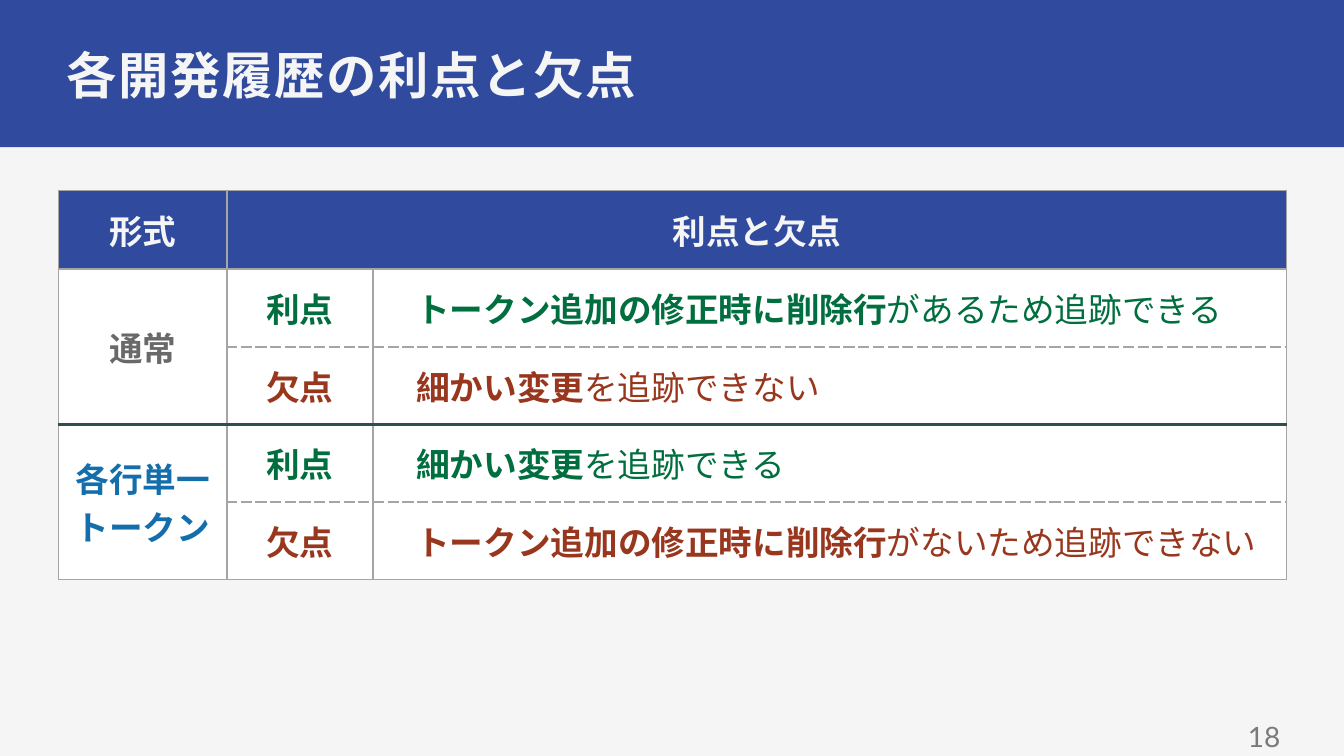
from dataclasses import dataclass

from lxml import etree
from pptx import Presentation
from pptx.dml.color import RGBColor
from pptx.enum.shapes import MSO_SHAPE
from pptx.enum.text import MSO_ANCHOR, MSO_AUTO_SIZE, PP_ALIGN
from pptx.oxml.ns import qn
from pptx.util import Inches, Pt

RECTANGLE = MSO_SHAPE.RECTANGLE
TOP, MIDDLE = MSO_ANCHOR.TOP, MSO_ANCHOR.MIDDLE
LEFT, CENTER, RIGHT = PP_ALIGN.LEFT, PP_ALIGN.CENTER, PP_ALIGN.RIGHT
JUSTIFY = PP_ALIGN.JUSTIFY
NO_AUTOFIT = MSO_AUTO_SIZE.NONE
TITLE_ONLY = 5
NO_STYLE = "{2D5ABB26-0587-4C30-8999-92F81FD0307C}"


@dataclass(frozen=True)
class Theme:
    background: str = "F5F5F5"
    primary: str = "304A9E"
    cell: str = "FFFFFF"
    muted: str = "696969"
    accent: str = "136EAB"
    merit: str = "006E3E"
    drawback: str = "98361E"
    page: str = "7A7A7A"
    grid: str = "A5A5A5"
    divider: str = "2F4F4F"
    title_font: str = "Lato"
    table_font: str = "Noto Sans CJK JP"
    title_size: int = 36
    table_size: int = 24
    page_size: int = 20


THEME = Theme()
GRID_LINE = (THEME.grid, 1.5, "solid")
DASHED_LINE = (THEME.grid, 1.5, "sysDash")
DIVIDER_LINE = (THEME.divider, 2.25, "solid")

COLUMN_WIDTHS = (1.67, 1.45, 9.06)
ROW_HEIGHTS = (0.78, 0.77, 0.77, 0.77, 0.77)
# Format, colour, then the bold start and plain end of its merit and drawback
FORMATS = (
    ("通常", THEME.muted,
     ("トークン追加の修正時に削除行", "があるため追跡できる"),
     ("細かい変更", "を追跡できない")),
    ("各行単一トークン", THEME.accent,
     ("細かい変更", "を追跡できる"),
     ("トークン追加の修正時に削除行", "がないため追跡できない")),
)


def rgb(color):
    return RGBColor.from_string(color)


def format_run(r, font, size, color, bold=False):
    """Style a run, using one typeface for Latin and Japanese text."""
    r.font.name = font
    r.font.size = Pt(size)
    r.font.bold = bold
    r.font.color.rgb = rgb(color)
    latin = r.font._element.find(qn("a:latin"))
    ea = etree.Element(qn("a:ea"), typeface=font)
    latin.addnext(ea)


def add_title_band(slide, left, top, width, height, text):
    title = slide.shapes.title
    band = slide.shapes.add_shape(RECTANGLE, Inches(left), Inches(top),
                                  Inches(width), Inches(height))
    band.shadow.inherit = False
    band.fill.solid()
    band.fill.fore_color.rgb = rgb(THEME.primary)
    band.line.fill.background()
    title.element.addprevious(band.element)

    title.left, title.top = Inches(left + 0.58), Inches(top + 0.43)
    title.width, title.height = Inches(width - 1.15), Inches(0.59)
    tf = title.text_frame
    tf.text = text
    tf.auto_size = NO_AUTOFIT
    tf.word_wrap = True
    tf.vertical_anchor = TOP
    tf.margin_left = tf.margin_top = tf.margin_right = Inches(0.08)
    tf.margin_bottom = Inches(0.06)
    p = tf.paragraphs[0]
    p.alignment = JUSTIFY
    p.line_spacing = 0.9
    p.space_before = Pt(16)
    r = p.runs[0]
    format_run(r, THEME.title_font, THEME.title_size, THEME.background, True)
    r.font._element.set("spc", "110")


def horizontal_line(index, col):
    """Return the style of the rule above table row number index."""
    if index == 3:
        return DIVIDER_LINE
    return DASHED_LINE if index in (2, 4) and col > 0 else GRID_LINE


def set_borders(cell, row, col):
    """Rule the cell's outer sides, leaving the inside of a merge open."""
    last_row = row + (cell.span_height if cell.is_merge_origin else 1)
    sides = {
        "L": GRID_LINE,
        "R": GRID_LINE,
        "T": horizontal_line(row, col),
        "B": horizontal_line(last_row, col),
    }
    if cell.is_spanned:
        del sides["L" if row == 0 else "T"]
    tc_pr = cell._tc.get_or_add_tcPr()
    for side, (color, width, dash) in sides.items():
        ln = etree.SubElement(tc_pr, qn("a:ln" + side), w=str(Pt(width)))
        fill = etree.SubElement(ln, qn("a:solidFill"))
        etree.SubElement(fill, qn("a:srgbClr"), val=color)
        etree.SubElement(ln, qn("a:prstDash"), val=dash)


def write_cell(cell, color, bold_text, plain_text="", alignment=CENTER):
    p = cell.text_frame.paragraphs[0]
    p.alignment = alignment
    for text, bold in ((bold_text, True), (plain_text, False)):
        if text:
            r = p.add_run()
            r.text = text
            format_run(r, THEME.table_font, THEME.table_size, color, bold)


def add_comparison_table(slide, left, top, width, height):
    frame = slide.shapes.add_table(len(ROW_HEIGHTS), len(COLUMN_WIDTHS),
                                   Inches(left), Inches(top),
                                   Inches(width), Inches(height))
    frame.element.find(".//" + qn("a:tableStyleId")).text = NO_STYLE
    table = frame.table
    table.first_row = table.horz_banding = False
    for column, share in zip(table.columns, COLUMN_WIDTHS):
        column.width = Inches(width * share / sum(COLUMN_WIDTHS))
    for row, share in zip(table.rows, ROW_HEIGHTS):
        row.height = Inches(height * share / sum(ROW_HEIGHTS))

    table.cell(0, 1).merge(table.cell(0, 2))
    write_cell(table.cell(0, 0), THEME.background, "形式")
    write_cell(table.cell(0, 1), THEME.background, "利点と欠点")
    for i, (name, color, merit, drawback) in enumerate(FORMATS):
        first = 1 + 2 * i
        table.cell(first, 0).merge(table.cell(first + 1, 0))
        write_cell(table.cell(first, 0), color, name)
        points = (("利点", THEME.merit, merit),
                  ("欠点", THEME.drawback, drawback))
        for row, (label, point_color, texts) in enumerate(points, first):
            write_cell(table.cell(row, 1), point_color, label)
            detail = table.cell(row, 2)
            detail.margin_left = Inches(0.43)
            write_cell(detail, point_color, *texts, alignment=LEFT)

    for row in range(len(ROW_HEIGHTS)):
        for col in range(len(COLUMN_WIDTHS)):
            cell = table.cell(row, col)
            cell.vertical_anchor = MIDDLE
            set_borders(cell, row, col)
            cell.fill.solid()
            cell.fill.fore_color.rgb = rgb(THEME.cell if row else THEME.primary)


def add_page_number(slide, left, top, width, height, number):
    sp = slide.shapes.add_textbox(Inches(left), Inches(top),
                                  Inches(width), Inches(height))
    tf = sp.text_frame
    tf.text = str(number)
    tf.word_wrap = True
    tf.vertical_anchor = MIDDLE
    tf.margin_left = tf.margin_right = Inches(0.06)
    tf.margin_top = tf.margin_bottom = Inches(0.06)
    p = tf.paragraphs[0]
    p.alignment = RIGHT
    format_run(p.runs[0], THEME.title_font, THEME.page_size, THEME.page)


def main():
    prs = Presentation()
    prs.slide_width, prs.slide_height = Inches(13.33), Inches(7.5)
    slide = prs.slides.add_slide(prs.slide_layouts[TITLE_ONLY])
    slide.background.fill.solid()
    slide.background.fill.fore_color.rgb = rgb(THEME.background)
    add_title_band(slide, 0, 0, 13.33, 1.46, "各開発履歴の利点と欠点")
    add_comparison_table(slide, 0.58, 1.89, 12.18, 3.86)
    add_page_number(slide, 9.76, 7.11, 3, 0.39, 18)
    prs.save("out.pptx")


if __name__ == "__main__":
    main()
